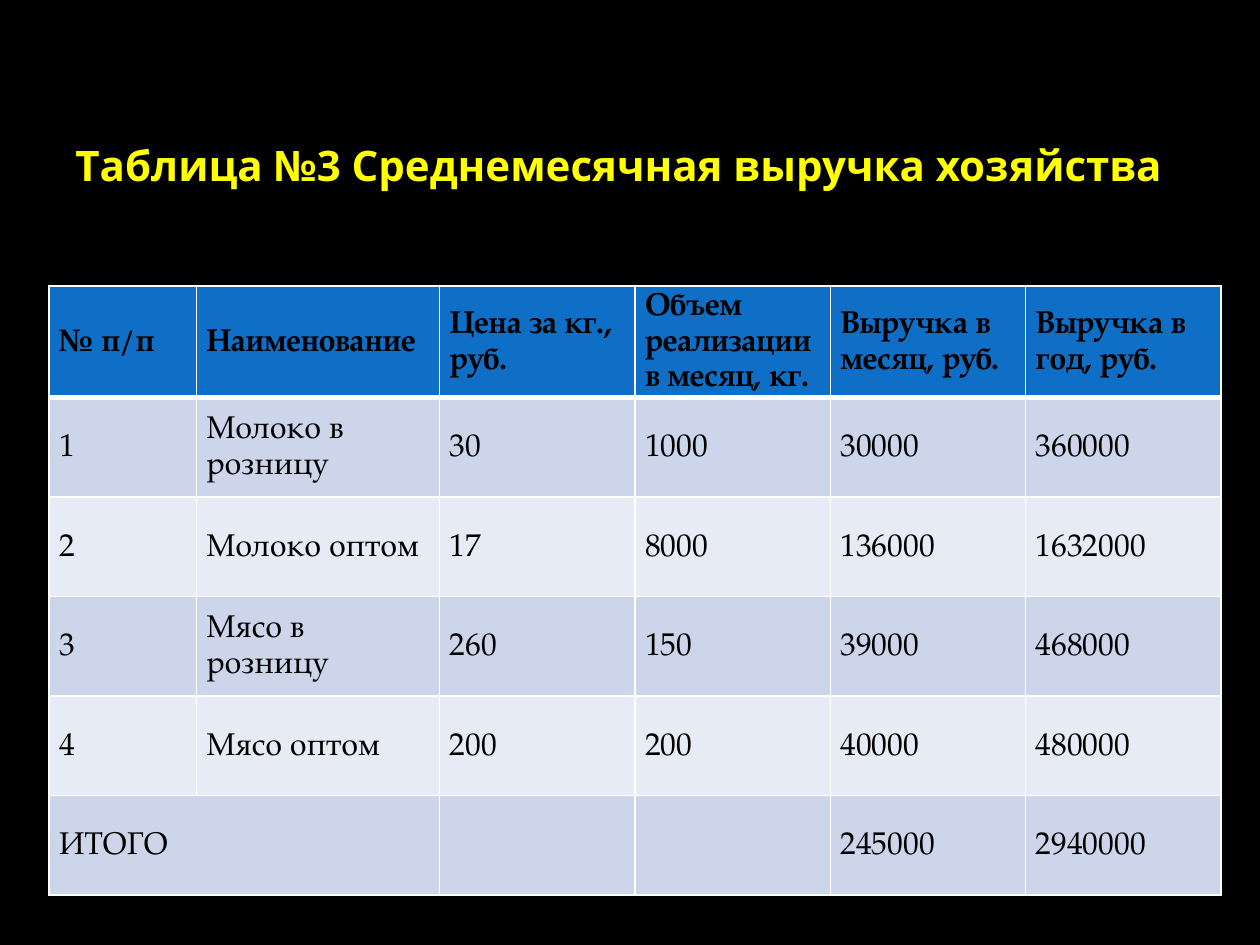
from pptx import Presentation
from pptx.dml.color import RGBColor
from pptx.enum.text import MSO_ANCHOR, PP_ALIGN
from pptx.oxml import parse_xml
from pptx.oxml.ns import nsdecls
from pptx.util import Inches, Pt


def rgb(color):
    return RGBColor.from_string(color)


def add_border(cell, side, width, color="FFFFFF"):
    line = parse_xml(
        f'<a:{side} {nsdecls("a")} w="{Pt(width)}"><a:solidFill>'
        f'<a:srgbClr val="{color}"/></a:solidFill></a:{side}>')
    # Border lines come before the fill; sides are added in schema order
    tcPr = cell._tc.get_or_add_tcPr()
    tcPr.insert(("lnL", "lnR", "lnT", "lnB").index(side), line)


prs = Presentation()
prs.slide_width, prs.slide_height = Inches(10), Inches(7.5)
s = prs.slides.add_slide(prs.slide_layouts[6])
s.background.fill.solid()
s.background.fill.fore_color.rgb = rgb("000000")

# Title
sp = s.shapes.add_textbox(Inches(0.5), Inches(0.3), Inches(9), Inches(2.43))
tf = sp.text_frame
tf.word_wrap = True
tf.vertical_anchor = MSO_ANCHOR.MIDDLE
tf.margin_bottom = Inches(0.46)
p = tf.paragraphs[0]
p.text = "Таблица №3 Среднемесячная выручка хозяйства"
p.alignment = PP_ALIGN.LEFT
p.font.name, p.font.size, p.font.bold = "Open Sans", Pt(24), True
p.font.color.rgb = rgb("FFFF00")

# Revenue table
rows = [
    ["№ п/п", "Наименование", "Цена за кг., руб.",
     "Объем реализации в месяц, кг.", "Выручка в месяц, руб.",
     "Выручка в год, руб."],
    ["1", "Молоко в розницу", "30", "1000", "30000", "360000"],
    ["2", "Молоко оптом", "17", "8000", "136000", "1632000"],
    ["3", "Мясо в розницу", "260", "150", "39000", "468000"],
    ["4", "Мясо оптом", "200", "200", "40000", "480000"],
    ["ИТОГО", "", "", "", "245000", "2940000"],
]
col_widths = [1.17, 1.93] + [1.55] * 4
row_height = 0.79
table = s.shapes.add_table(
    len(rows), len(col_widths), Inches(0.39), Inches(2.27),
    Inches(sum(col_widths)), Inches(row_height * len(rows))).table
for column, width in zip(table.columns, col_widths):
    column.width = Inches(width)

for i, row in enumerate(rows):
    table.rows[i].height = Inches(row_height)
    fill = "0F6FC6" if i == 0 else ("CCD5EA" if i % 2 else "E7EBF5")
    for j, text in enumerate(row):
        cell = table.cell(i, j)
        cell.fill.solid()
        cell.fill.fore_color.rgb = rgb(fill)
        cell.vertical_anchor = MSO_ANCHOR.MIDDLE
        cell.margin_left = cell.margin_right = Inches(0.08)
        cell.margin_top = cell.margin_bottom = Inches(0.02)
        p = cell.text_frame.paragraphs[0]
        p.text = text
        # Fixed spacing keeps the three-line header compact
        p.line_spacing = Pt(20.3) if i == 0 else 1.15
        p.font.name, p.font.size = "TeX Gyre Pagella", Pt(18)
        p.font.bold = i == 0
        p.font.color.rgb = rgb("000000")
        # Thick rule under the header, thin lines elsewhere
        add_border(cell, "lnL", 1)
        add_border(cell, "lnR", 1)
        add_border(cell, "lnT", 3 if i == 1 else 1)
        add_border(cell, "lnB", 3 if i == 0 else 1)

# Total label spans the first two columns
table.cell(5, 0).merge(table.cell(5, 1))

prs.save("out.pptx")
